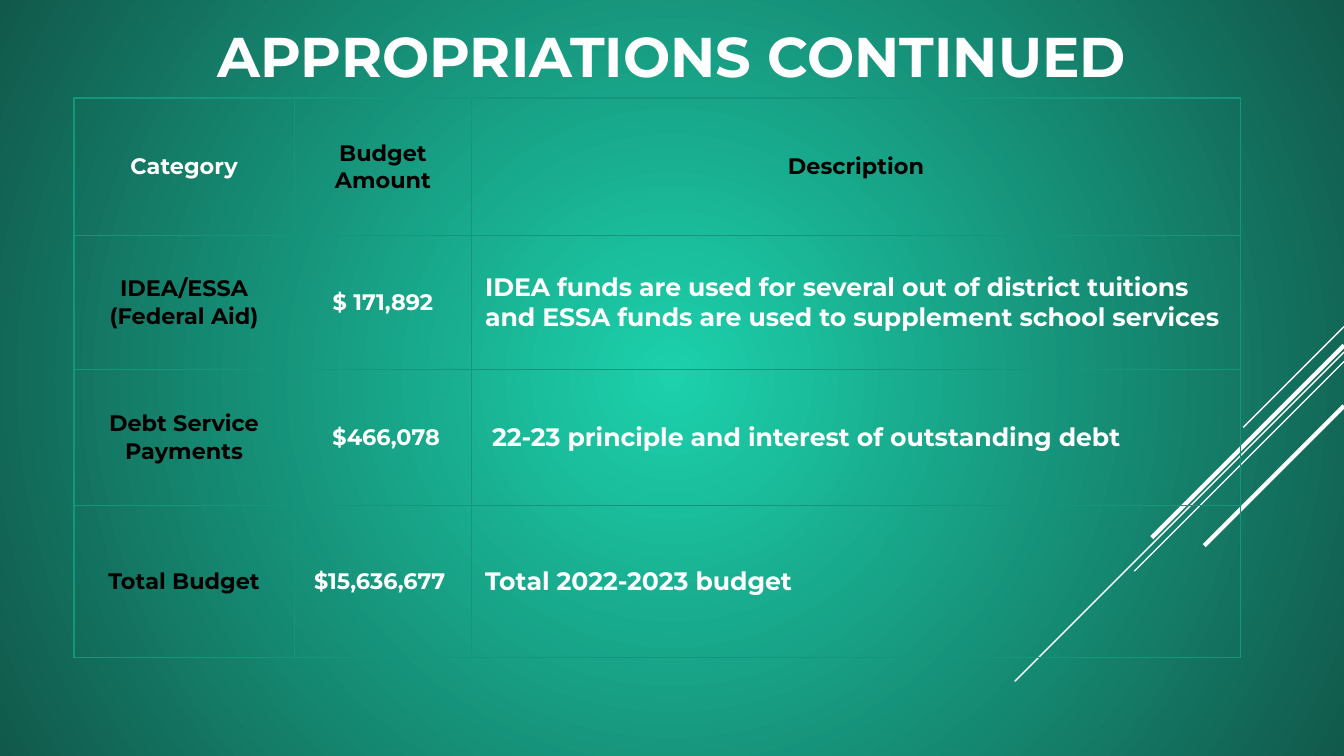
from lxml import etree
from pptx import Presentation
from pptx.dml.color import RGBColor
from pptx.enum.shapes import MSO_CONNECTOR as Connector
from pptx.enum.text import MSO_ANCHOR as Anchor, PP_ALIGN as Align
from pptx.oxml import parse_xml
from pptx.oxml.ns import nsdecls, qn
from pptx.util import Inches, Pt

FONT = "Montserrat"
WHITE, BLACK, BORDER = "FFFFFF", "000000", "14967C"
GLOW, EDGE = "1CD1AC", "11594B"
COLUMN_WIDTHS = [1.64, 1.32, 5.72]
ROW_HEIGHTS = [1.02, 1, 1.01, 1.13]
ROWS = [
    ["Category", "Budget Amount", "Description"],
    ["IDEA/ESSA\n(Federal Aid)", "$ 171,892",
     "IDEA funds are used for several out of district tuitions "
     "and ESSA funds are used to supplement school services"],
    ["Debt Service\nPayments", " $466,078",
     " 22-23 principle and interest of outstanding debt"],
    ["Total Budget", "$15,636,677 ", "Total 2022-2023 budget"],
]
STREAKS = [
    (0, 0.75, 0.75),
    (0.19, 2.45, 0.75),
    (0.26, 1.56, 0.75),
    (0.14, 1.43, 2.25),
    (0.59, 1.04, 2.25),
]


def rgb(color):
    """Turn a hex string into a colour."""
    return RGBColor.from_string(color)


def style_text(text_frame, size, color, align):
    """Format every paragraph and run of a text frame."""
    for paragraph in text_frame.paragraphs:
        paragraph.alignment = align
        for run in paragraph.runs:
            run.font.name = FONT
            run.font.size = Pt(size)
            run.font.bold = True
            run.font.color.rgb = rgb(color)


def paint_background(slide):
    """Fill the slide with a gradient that darkens outward from the centre."""
    fill = slide.background.fill
    fill.gradient()
    for stop, color in zip(fill.gradient_stops, (GLOW, EDGE)):
        stop.color.rgb = rgb(color)
    gradient = slide.element.find(".//" + qn("a:gradFill"))
    gradient.replace(gradient.find(qn("a:lin")), parse_xml(
        f'<a:path {nsdecls("a")} path="circle">'
        '<a:fillToRect l="50000" t="50000" r="50000" b="50000"/></a:path>'))


def add_streaks(slide, right, top):
    """Draw diagonal streaks falling leftward from the right edge."""
    for drop, length, weight in STREAKS:
        start = top + drop
        streak = slide.shapes.add_connector(
            Connector.STRAIGHT, Inches(right), Inches(start),
            Inches(right - length), Inches(start + length))
        streak.line.color.rgb = rgb(WHITE)
        streak.line.width = Pt(weight)
        properties = streak.element.find(qn("p:spPr"))
        etree.SubElement(properties, qn("a:effectLst"))


def place_title(slide, left, top, width, height):
    """Move and format the title placeholder."""
    title = slide.shapes.title
    title.left, title.top = Inches(left), Inches(top)
    title.width, title.height = Inches(width), Inches(height)
    frame = title.text_frame
    frame.text = "APPROPRIATIONS CONTINUED"
    frame.margin_left = frame.margin_right = 0
    frame.margin_top = frame.margin_bottom = 0
    frame.vertical_anchor = Anchor.MIDDLE
    style_text(frame, 30, WHITE, Align.CENTER)


def add_borders(cell):
    """Outline all four sides of a table cell."""
    properties = cell._tc.get_or_add_tcPr()
    for index, side in enumerate(("lnL", "lnR", "lnT", "lnB")):
        properties.insert(index, parse_xml(
            f'<a:{side} {nsdecls("a")} w="{Pt(0.75)}"><a:solidFill>'
            f'<a:srgbClr val="{BORDER}"/></a:solidFill></a:{side}>'))


def cell_style(row, column):
    """Return the text size, colour and alignment for a table position."""
    if row == 0:
        return 12, BLACK if column else WHITE, Align.CENTER
    return [
        (12, BLACK, Align.CENTER),
        (12, WHITE, Align.CENTER),
        (13.5, WHITE, Align.LEFT),
    ][column]


def add_budget_table(slide, left, top):
    """Build the table of budget categories, amounts and descriptions."""
    table = slide.shapes.add_table(
        len(ROWS), len(COLUMN_WIDTHS), Inches(left), Inches(top),
        Inches(sum(COLUMN_WIDTHS)), Inches(sum(ROW_HEIGHTS))).table
    table.first_row = table.horz_banding = False
    for column, width in zip(table.columns, COLUMN_WIDTHS):
        column.width = Inches(width)
    for row, height in zip(table.rows, ROW_HEIGHTS):
        row.height = Inches(height)
    for row_index, texts in enumerate(ROWS):
        for column_index, text in enumerate(texts):
            cell = table.cell(row_index, column_index)
            cell.text_frame.text = text
            cell.vertical_anchor = Anchor.MIDDLE
            cell.margin_left = cell.margin_right = Inches(0.1)
            cell.margin_top = cell.margin_bottom = Inches(0.07)
            cell.fill.background()
            add_borders(cell)
            style_text(cell.text_frame, *cell_style(row_index, column_index))


def main():
    """Build and save the presentation."""
    presentation = Presentation()
    presentation.slide_width = Inches(10)
    presentation.slide_height = Inches(10 * 9 / 16)
    slide = presentation.slides.add_slide(presentation.slide_layouts[5])
    paint_background(slide)
    add_streaks(slide, 10, 2.43)
    place_title(slide, 1.3, 0.15, 7.4, 0.52)
    add_budget_table(slide, 0.55, 0.73)
    presentation.save("out.pptx")


if __name__ == "__main__":
    main()
